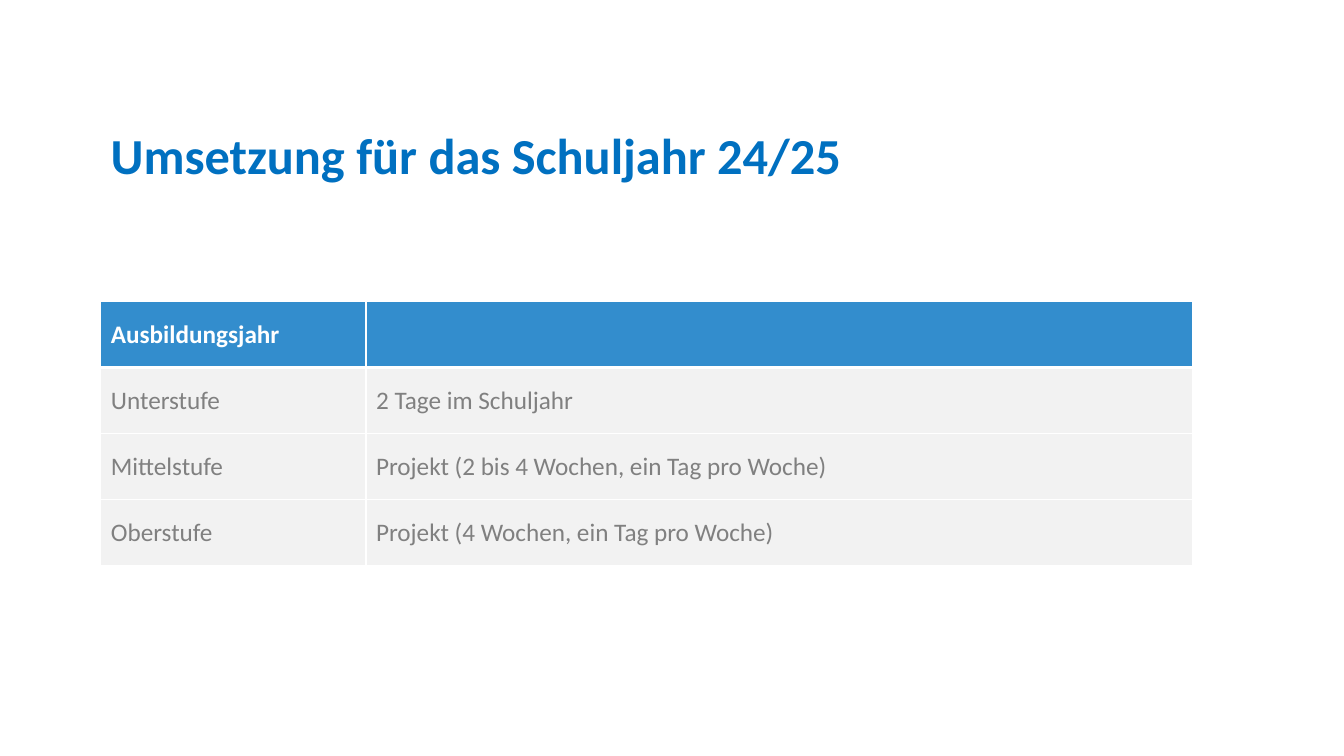
from typing import NamedTuple

from lxml.etree import SubElement
from pptx import Presentation
from pptx.dml.color import RGBColor
from pptx.enum.text import MSO_ANCHOR, MSO_AUTO_SIZE
from pptx.oxml.ns import qn
from pptx.table import _Cell
from pptx.text.text import TextFrame
from pptx.util import Inches, Pt

TITLE_BLUE = RGBColor(0x00, 0x70, 0xC0)
HEADER_BLUE = RGBColor(0x33, 0x8D, 0xCD)
ROW_GRAY = RGBColor(0xF2, 0xF2, 0xF2)
TEXT_GRAY = RGBColor(0x80, 0x80, 0x80)
WHITE = RGBColor(0xFF, 0xFF, 0xFF)

TITLE_INDENT = Inches(0.49)
COLUMN_WIDTHS = (2.63, 8.2)
ROW_HEIGHT = 0.655


class ScheduleRow(NamedTuple):
    year: str
    plan: str


SCHEDULE = [
    ScheduleRow("Ausbildungsjahr", ""),
    ScheduleRow("Unterstufe", "2 Tage im Schuljahr"),
    ScheduleRow("Mittelstufe", "Projekt (2 bis 4 Wochen, ein Tag pro Woche)"),
    ScheduleRow("Oberstufe", "Projekt (4 Wochen, ein Tag pro Woche)"),
]


def write_text(frame: TextFrame, text: str, *, size: float = 18,
               color: RGBColor = TEXT_GRAY, bold: bool = False) -> None:
    run = frame.paragraphs[0].add_run()
    run.text = text
    run.font.name = "Calibri"
    run.font.size = Pt(size)
    run.font.bold = bold
    run.font.color.rgb = color


def add_borders(cell: _Cell, top: float, bottom: float) -> None:
    properties = cell._tc.get_or_add_tcPr()
    for side, width in (("L", 1), ("R", 1), ("T", top), ("B", bottom)):
        line = SubElement(properties, qn(f"a:ln{side}"), w=str(Pt(width)))
        fill = SubElement(line, qn("a:solidFill"))
        SubElement(fill, qn("a:srgbClr"), val=str(WHITE))


def style_cell(cell: _Cell, text: str, row: int) -> None:
    is_header = row == 0
    # A thicker line separates the header from the first year
    add_borders(cell, top=3 if row == 1 else 1, bottom=3 if is_header else 1)
    cell.fill.solid()
    cell.fill.fore_color.rgb = HEADER_BLUE if is_header else ROW_GRAY
    cell.vertical_anchor = MSO_ANCHOR.MIDDLE
    if text:
        write_text(cell.text_frame, text, bold=is_header,
                   color=WHITE if is_header else TEXT_GRAY)


def main() -> None:
    presentation = Presentation()
    presentation.slide_width = Inches(13.33)
    presentation.slide_height = Inches(7.5)
    slide = presentation.slides.add_slide(presentation.slide_layouts[6])

    # Title with a hanging indent
    title = slide.shapes.add_textbox(
        Inches(1), Inches(1.18), Inches(8.1), Inches(0.71)).text_frame
    title.word_wrap = True
    title.auto_size = MSO_AUTO_SIZE.SHAPE_TO_FIT_TEXT
    indent = title.paragraphs[0]._p.get_or_add_pPr()
    indent.set("marL", str(TITLE_INDENT))
    indent.set("indent", str(-TITLE_INDENT))
    write_text(title, "Umsetzung für das Schuljahr 24/25",
               size=36, color=TITLE_BLUE, bold=True)

    # Schedule by training year
    schedule = slide.shapes.add_table(
        len(SCHEDULE), len(COLUMN_WIDTHS), Inches(1), Inches(2.99),
        Inches(sum(COLUMN_WIDTHS)), Inches(ROW_HEIGHT * len(SCHEDULE))).table
    schedule.horz_banding = False
    for column, width in zip(schedule.columns, COLUMN_WIDTHS):
        column.width = Inches(width)
    for row, entry in enumerate(SCHEDULE):
        for column, text in enumerate(entry):
            style_cell(schedule.cell(row, column), text, row)

    presentation.save("out.pptx")


if __name__ == "__main__":
    main()
